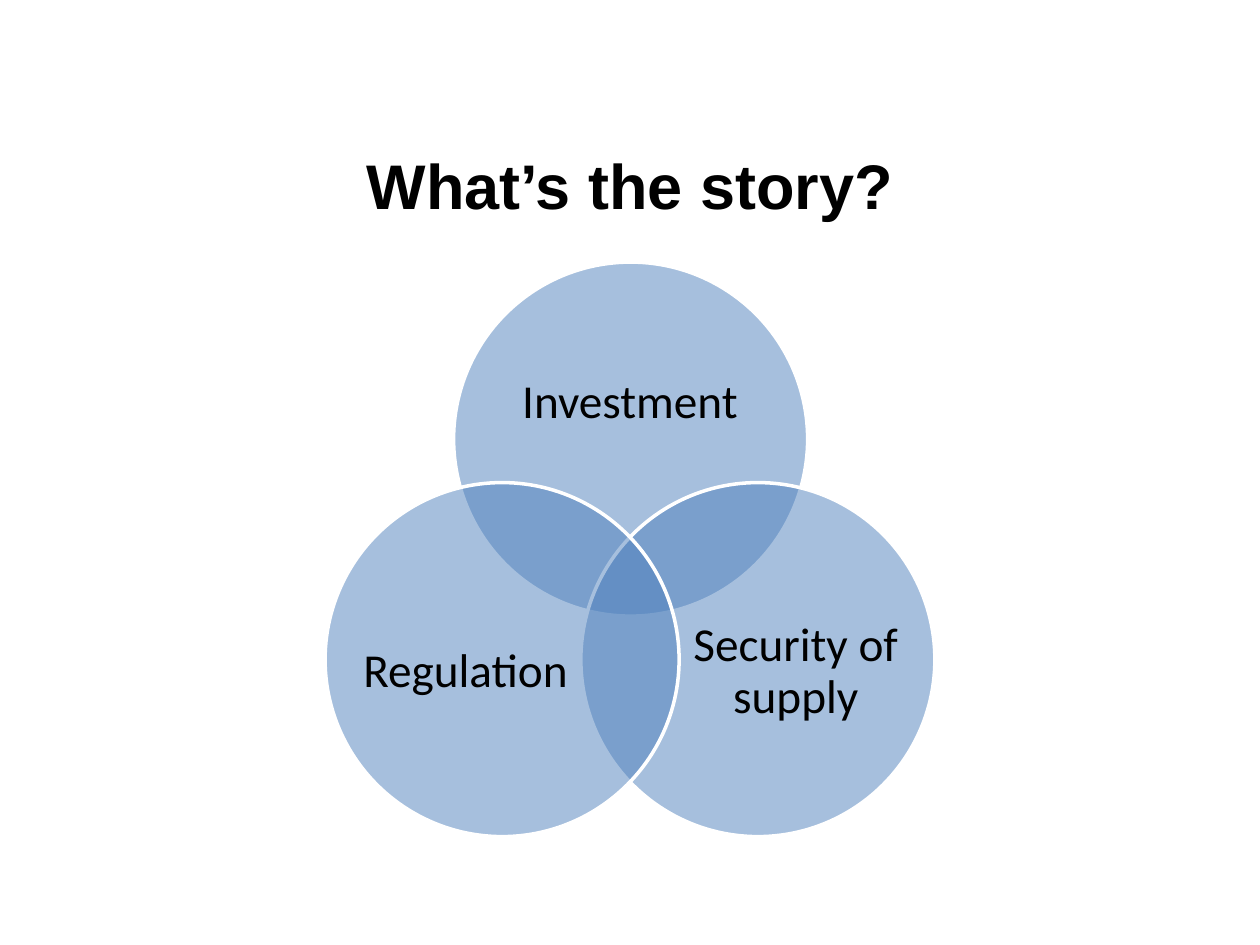
from lxml.etree import SubElement
from pptx import Presentation
from pptx.dml.color import RGBColor
from pptx.enum.shapes import MSO_SHAPE
from pptx.enum.text import MSO_ANCHOR, PP_ALIGN
from pptx.oxml.ns import qn
from pptx.util import Inches, Pt

COLORS = {"text": "000000", "circle": "4F81BD", "outline": "FFFFFF"}
DIAMETER = 2.81
CIRCLES = [
    ("Investment", (3.6, 2.08), (3.97, 2.57, 2.06, 1.26)),
    ("Security of supply", (4.61, 3.83), (5.47, 4.56, 1.69, 1.55)),
    ("Regulation", (2.58, 3.83), (2.85, 4.56, 1.69, 1.55)),
]


def color(name):
    """Return the named palette colour."""
    return RGBColor.from_string(COLORS[name])


def write_text(shape, text, size, font, bold=False, line_spacing=1.0, bottom=0):
    """Write one centred paragraph in the middle of a shape."""
    frame = shape.text_frame
    frame.word_wrap = True
    frame.vertical_anchor = MSO_ANCHOR.MIDDLE
    frame.margin_left = frame.margin_right = frame.margin_top = 0
    frame.margin_bottom = Inches(bottom)
    paragraph = frame.paragraphs[0]
    paragraph.text = text
    paragraph.alignment = PP_ALIGN.CENTER
    paragraph.line_spacing = line_spacing
    paragraph.font.size = Pt(size)
    paragraph.font.name = font
    paragraph.font.bold = bold
    paragraph.font.color.rgb = color("text")


def add_title(slide, text):
    """Place and fill the title placeholder."""
    title = slide.shapes.title
    title.left, title.top = Inches(0.5), Inches(1.07)
    title.width, title.height = Inches(9), Inches(0.94)
    write_text(title, text, size=36, font="Arial", bold=True, bottom=0.16)


def add_circle(shapes, left, top):
    """Add a half-transparent circle with a white outline."""
    circle = shapes.add_shape(
        MSO_SHAPE.OVAL, Inches(left), Inches(top), Inches(DIAMETER), Inches(DIAMETER)
    )
    circle.shadow.inherit = False
    circle.fill.solid()
    circle.fill.fore_color.rgb = color("circle")
    fill_color = circle.fill._xPr.find(qn("a:solidFill"))[0]
    SubElement(fill_color, qn("a:alpha")).set("val", "50000")
    circle.line.color.rgb = color("outline")
    circle.line.width = Pt(2)


def add_label(shapes, text, box):
    """Add a circle's label in its own text box."""
    label = shapes.add_textbox(*map(Inches, box))
    write_text(label, text, size=27, font="Calibri", line_spacing=0.9)


def main():
    """Build the slide and save it."""
    presentation = Presentation()
    presentation.slide_width, presentation.slide_height = Inches(10), Inches(7.5)
    slide = presentation.slides.add_slide(presentation.slide_layouts[5])
    add_title(slide, "What’s the story?")
    venn = slide.shapes.add_group_shape()
    for text, position, label_box in CIRCLES:
        add_circle(venn.shapes, *position)
        add_label(venn.shapes, text, label_box)
    presentation.save("out.pptx")


if __name__ == "__main__":
    main()
